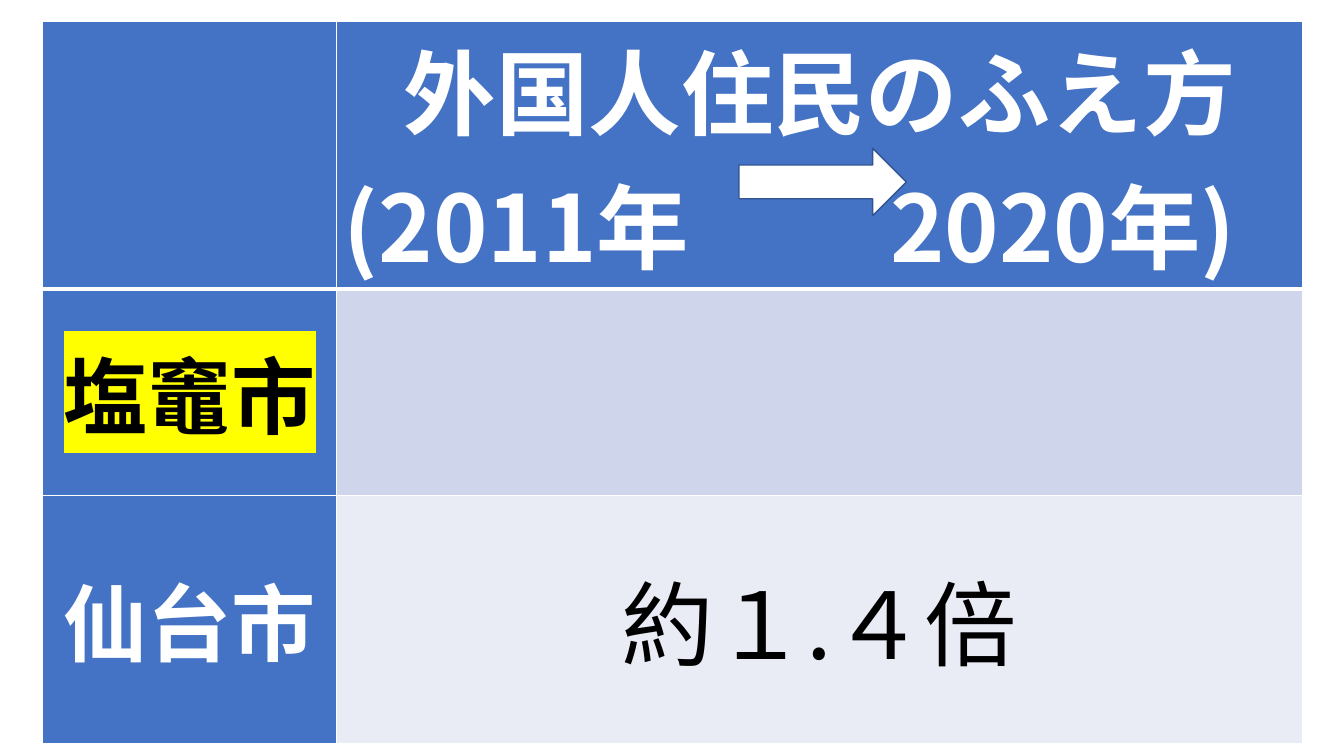
from lxml import etree
from pptx import Presentation, util as u
from pptx.dml.color import RGBColor
from pptx.enum import shapes, text
from pptx.oxml.ns import qn

PX = 9144
FONT = "Noto Sans CJK JP"
HUE = {"blue": "4472C4", "navy": "325491", "white": "FFFFFF", "black": "000000",
       "mark": "FFFF00", "band": "CFD5EA", "pale": "E9EBF5"}
COLS = [292, 958]
ROWS = [228, 205, 246]
FILLS = [["blue", "blue"], ["blue", "band"], ["blue", "pale"]]


def px(n):
    """Turn px into EMU."""
    return u.Emu(n * PX)


def rgb(name):
    """Look up a named colour."""
    return RGBColor.from_string(HUE[name])


def write(para, words, size=66, color="white", bold=True, mark=None, tab=None):
    """Put formatted words in a paragraph, centred unless it has a tab stop."""
    para.alignment = text.PP_ALIGN.LEFT if tab else text.PP_ALIGN.CENTER
    if tab:
        stops = etree.SubElement(para._p.get_or_add_pPr(), qn("a:tabLst"))
        etree.SubElement(stops, qn("a:tab"), pos=str(px(tab)), algn="l")
    run = para.add_run()
    run.text = words
    font = run.font
    font.size, font.bold, font.name = u.Pt(size), bold, FONT
    font.color.rgb = rgb(color)
    props = run._r.get_or_add_rPr()
    etree.SubElement(props, qn("a:ea"), typeface=FONT)
    if mark:
        glow = etree.Element(qn("a:highlight"))
        etree.SubElement(glow, qn("a:srgbClr"), val=HUE[mark])
        props.find(qn("a:solidFill")).addnext(glow)


def edge(cell, top=1, base=1):
    """Draw white borders round a cell, widths in points."""
    props = cell._tc.get_or_add_tcPr()
    sides = {"L": 1, "R": 1, "T": top, "B": base}
    for i, (side, width) in enumerate(sides.items()):
        line = etree.Element(qn("a:ln" + side), w=str(u.Pt(width)))
        fill = etree.SubElement(line, qn("a:solidFill"))
        etree.SubElement(fill, qn("a:srgbClr"), val=HUE["white"])
        props.insert(i, line)


def grid(slide, x, y):
    """Build the table of growth by city."""
    frame = slide.shapes.add_table(len(ROWS), len(COLS), px(x), px(y),
                                   px(sum(COLS)), px(sum(ROWS)))
    table = frame.table
    table.first_row = table.horz_banding = False
    for col, wide in zip(table.columns, COLS):
        col.width = px(wide)
    for r, tall in enumerate(ROWS):
        table.rows[r].height = px(tall)
        for c, fill in enumerate(FILLS[r]):
            cell = table.cell(r, c)
            cell.fill.solid()
            cell.fill.fore_color.rgb = rgb(fill)
            cell.margin_left = cell.margin_right = px(7)
            cell.margin_top = cell.margin_bottom = 0
            if r:
                cell.vertical_anchor = text.MSO_ANCHOR.MIDDLE
            edge(cell, top=3 if r == 1 else 1, base=1 if r else 3)
    head = table.cell(0, 1).text_frame
    write(head.paragraphs[0], "外国人住民のふえ方")
    write(head.add_paragraph(), "(2011年\t2020年)", tab=542)
    write(table.cell(1, 0).text_frame.paragraphs[0], "塩竈市",
          size=60, color="black", mark="mark")
    write(table.cell(2, 0).text_frame.paragraphs[0], "仙台市", size=60)
    write(table.cell(2, 1).text_frame.paragraphs[0], "約１.４倍",
          color="black", bold=False)


def arrow(slide, x, y, wide, tall):
    """Place the arrow between the two years."""
    shape = slide.shapes.add_shape(shapes.MSO_SHAPE.RIGHT_ARROW,
                                   px(x), px(y), px(wide), px(tall))
    shape.shadow.inherit = False
    shape.fill.solid()
    shape.fill.fore_color.rgb = rgb("white")
    shape.line.color.rgb = rgb("navy")
    shape.line.width = u.Pt(1)


def main():
    """Build and save the slide."""
    deck = Presentation()
    deck.slide_width, deck.slide_height = px(1333), px(750)
    slide = deck.slides.add_slide(deck.slide_layouts[6])
    grid(slide, 42, 21)
    arrow(slide, 733, 147, 166, 67)
    deck.save("out.pptx")


if __name__ == "__main__":
    main()
